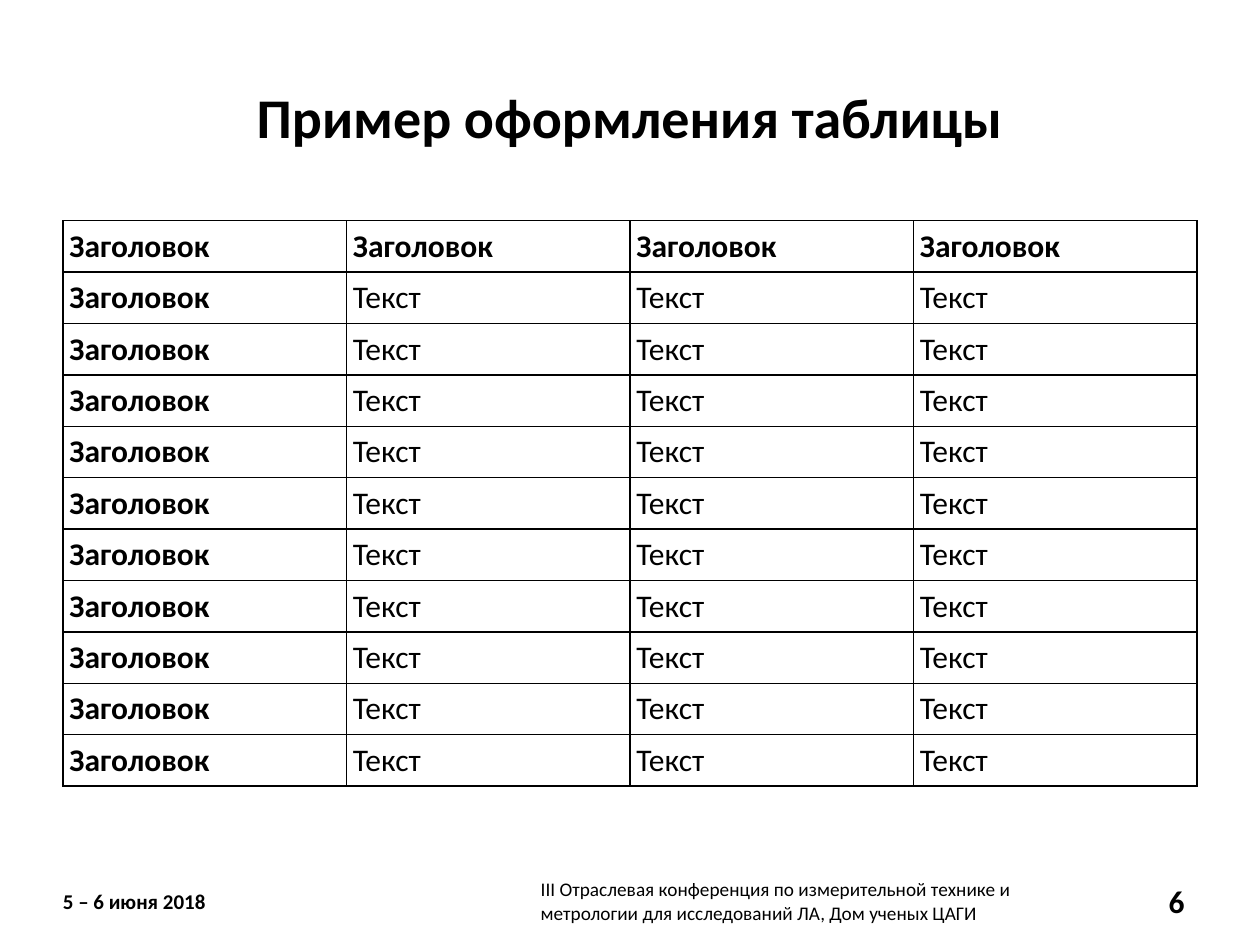
from dataclasses import dataclass
from typing import Any

from lxml.etree import SubElement
from pptx import Presentation
from pptx.dml.color import RGBColor
from pptx.enum.text import MSO_ANCHOR, PP_ALIGN
from pptx.oxml.ns import qn
from pptx.util import Cm, Pt

BLACK = RGBColor(0x00, 0x00, 0x00)
WHITE = RGBColor(0xFF, 0xFF, 0xFF)

ROWS, COLS = 11, 4
MARGIN, CONTENT_WIDTH = 1.27, 22.86
TABLE_TOP, TABLE_HEIGHT = 4.45, 11.33
FOOTER_TOP, FOOTER_HEIGHT = 17.65, 1.02
CELL_INSET = 0.13


@dataclass
class Label:
    text: str
    left: float
    top: float
    width: float
    height: float
    size: int
    bold: bool = True
    align: PP_ALIGN = PP_ALIGN.LEFT
    inset_x: float = 0.25
    inset_y: float = 0.13
    wrap: bool = True


LABELS = [
    Label("5 – 6 июня 2018", MARGIN, FOOTER_TOP, 3.18, FOOTER_HEIGHT, 12,
          inset_x=0, inset_y=0, wrap=False),
    Label("Пример оформления таблицы", MARGIN, 0.76, CONTENT_WIDTH, 3.18, 32,
          align=PP_ALIGN.CENTER),
    Label("III Отраслевая конференция по измерительной технике и метрологии "
          "для исследований ЛА, Дом ученых ЦАГИ",
          10.9, FOOTER_TOP, 10.52, FOOTER_HEIGHT, 11, bold=False, inset_x=0),
    Label("6", 22.48, FOOTER_TOP, 1.65, FOOTER_HEIGHT, 18,
          align=PP_ALIGN.RIGHT),
]


def set_attrs(obj: Any, values: dict[str, Any]) -> None:
    for name, value in values.items():
        setattr(obj, name, value)


def margins(x: float, y: float) -> dict[str, Any]:
    return {"margin_left": Cm(x), "margin_right": Cm(x),
            "margin_top": Cm(y), "margin_bottom": Cm(y)}


def write(p: Any, text: str, size: int, bold: bool) -> None:
    r = p.add_run()
    r.text = text
    set_attrs(r.font, {"name": "Calibri", "size": Pt(size), "bold": bold})
    r.font.color.rgb = BLACK


def draw_label(s: Any, label: Label) -> None:
    sp = s.shapes.add_textbox(Cm(label.left), Cm(label.top),
                              Cm(label.width), Cm(label.height))
    tf = sp.text_frame
    set_attrs(tf, margins(label.inset_x, label.inset_y)
              | {"word_wrap": label.wrap, "vertical_anchor": MSO_ANCHOR.MIDDLE})
    p = tf.paragraphs[0]
    p.alignment = label.align
    write(p, label.text, label.size, label.bold)


def draw_borders(cell: Any) -> None:
    tc_pr = cell._tc.get_or_add_tcPr()
    for side in ("a:lnL", "a:lnR", "a:lnT", "a:lnB"):
        ln = SubElement(tc_pr, qn(side), w=str(Pt(1)))
        fill = SubElement(ln, qn("a:solidFill"))
        SubElement(fill, qn("a:srgbClr"), val=str(BLACK))


def draw_table(s: Any) -> None:
    table = s.shapes.add_table(ROWS, COLS, Cm(MARGIN), Cm(TABLE_TOP),
                               Cm(CONTENT_WIDTH), Cm(TABLE_HEIGHT)).table
    set_attrs(table, {"first_row": False, "horz_banding": False})
    for i in range(ROWS):
        for j in range(COLS):
            is_header = i == 0 or j == 0
            cell = table.cell(i, j)
            set_attrs(cell, margins(CELL_INSET, CELL_INSET)
                      | {"vertical_anchor": MSO_ANCHOR.MIDDLE})
            draw_borders(cell)
            cell.fill.background()
            write(cell.text_frame.paragraphs[0],
                  "Заголовок" if is_header else "Текст", 18, is_header)


def main() -> None:
    prs = Presentation()
    set_attrs(prs, {"slide_width": Cm(25.4), "slide_height": Cm(19.05)})
    s = prs.slides.add_slide(prs.slide_layouts[6])
    s.background.fill.solid()
    s.background.fill.fore_color.rgb = WHITE
    draw_table(s)
    for label in LABELS:
        draw_label(s, label)
    prs.save("out.pptx")


if __name__ == "__main__":
    main()
